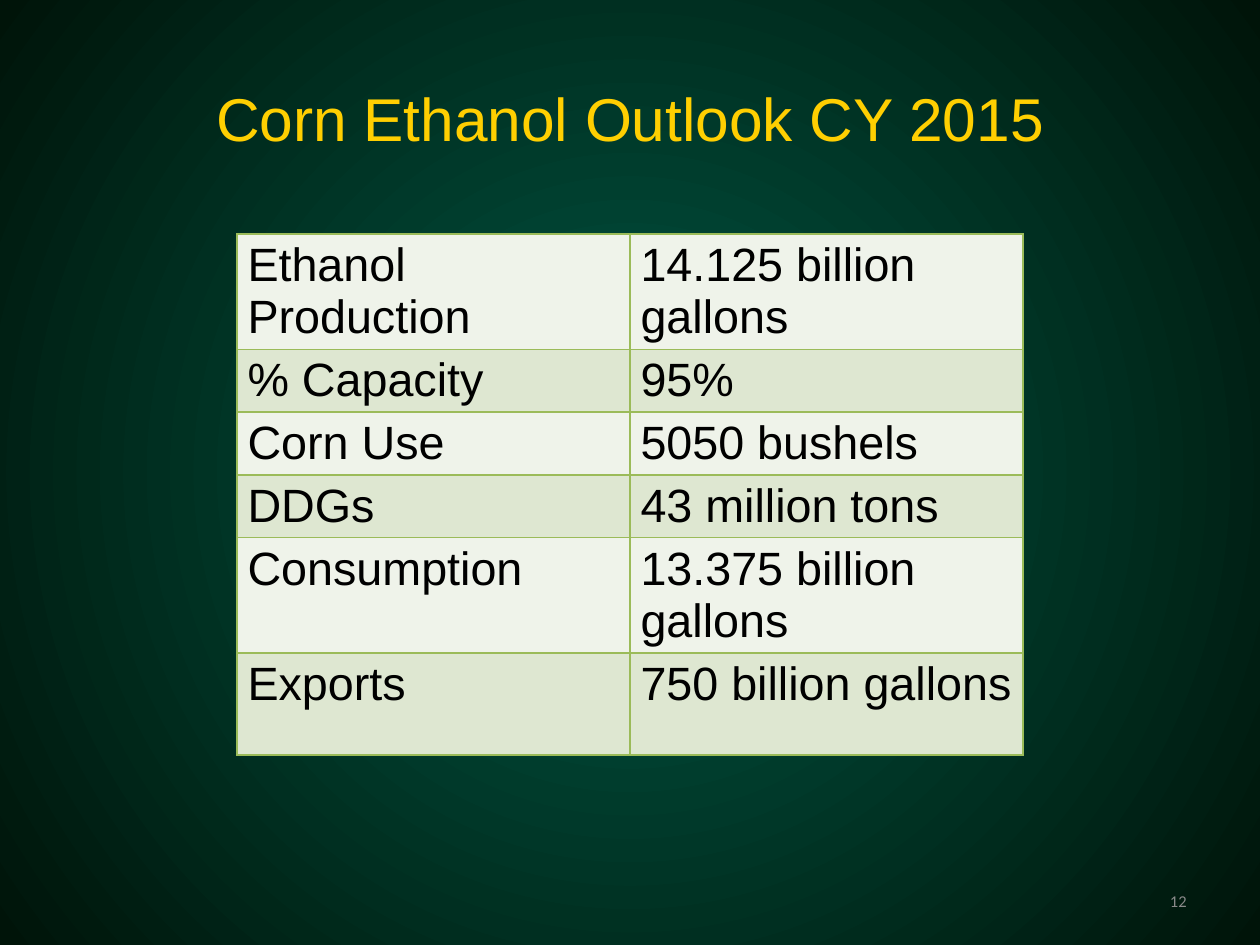
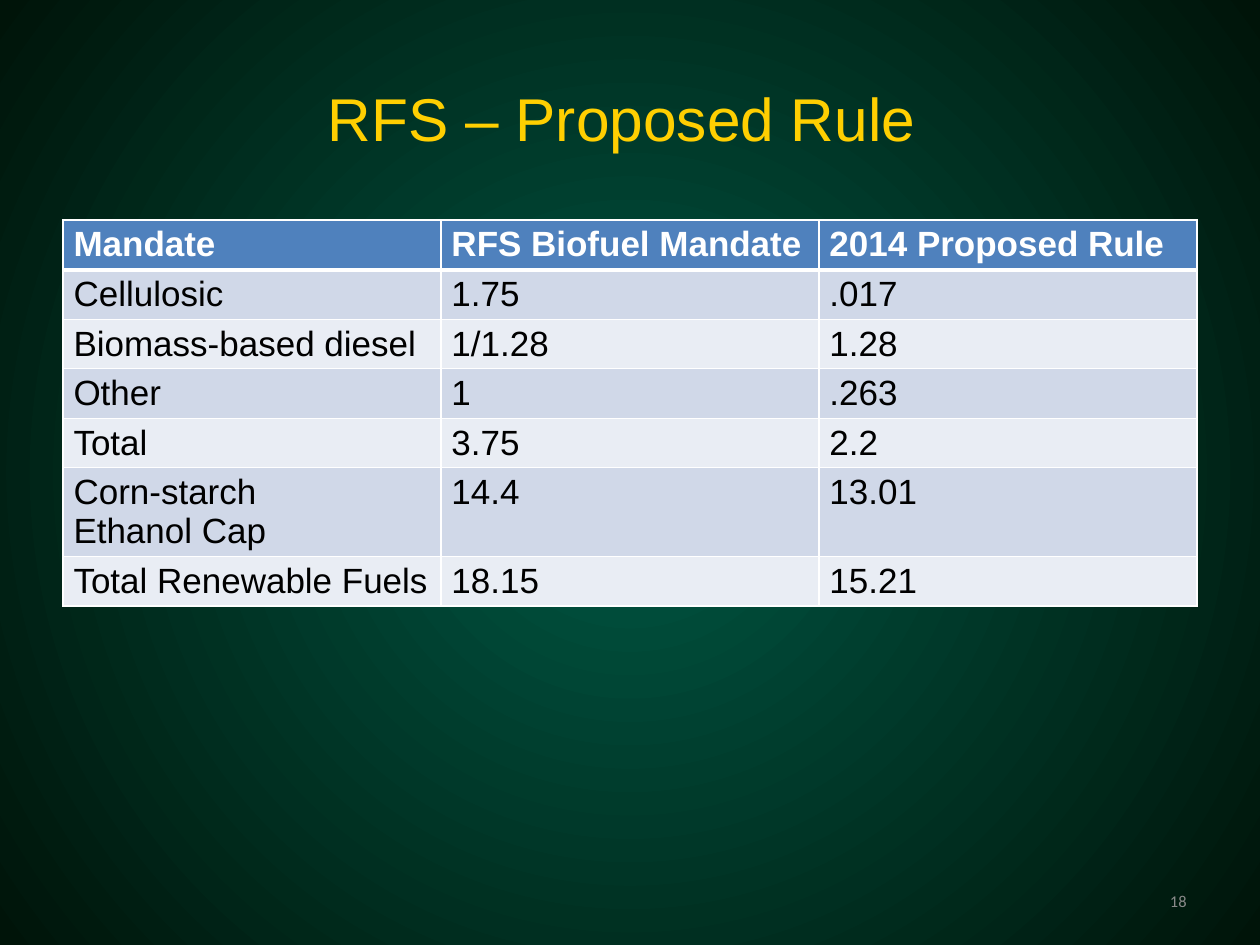
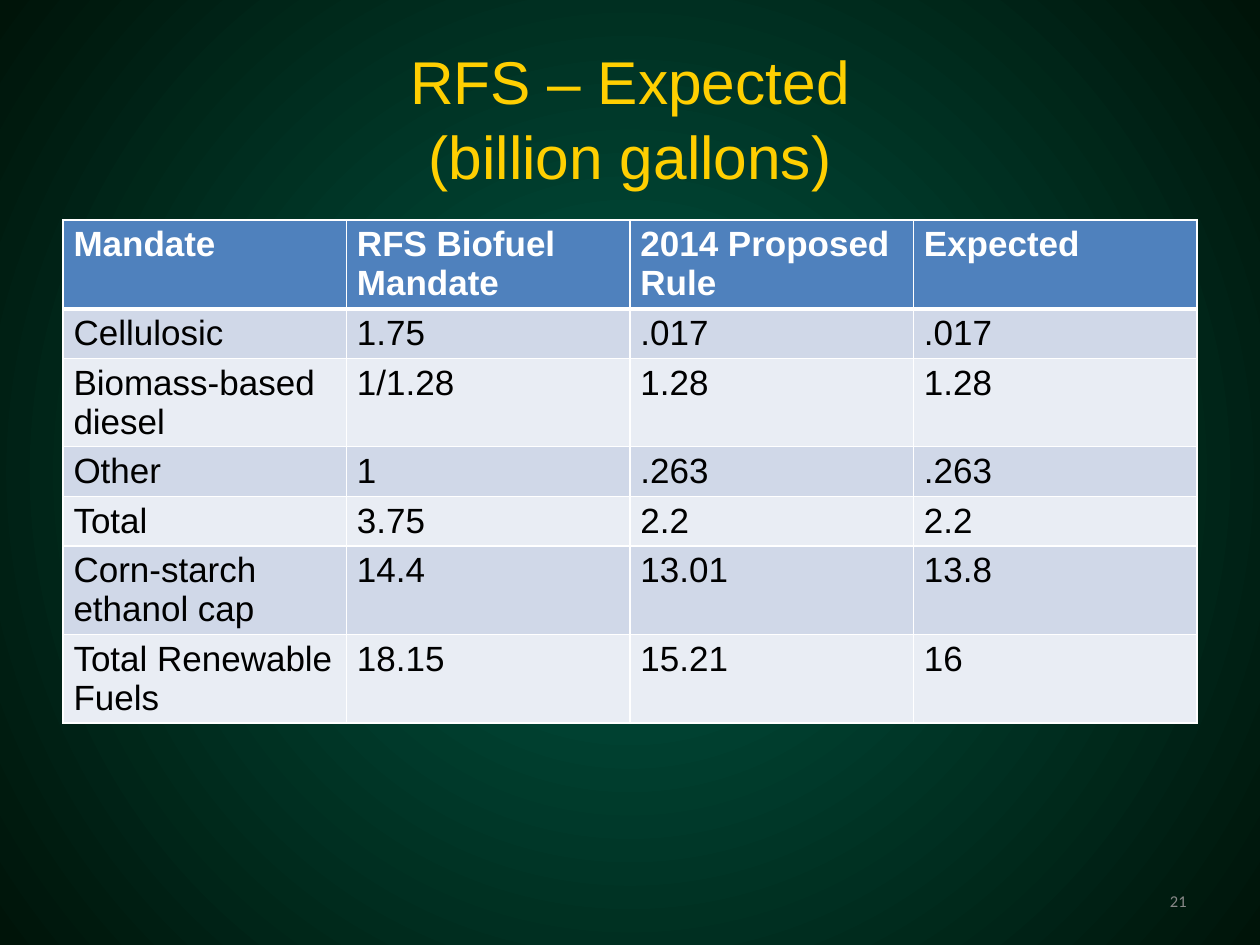
import copy
import pptx
import pptx.dml.color
import pptx.enum.text
import pptx.oxml
import pptx.oxml.ns
import pptx.util

EMU = 914400 // 105
BLACK, WHITE, GOLD, GREY = "000000", "FFFFFF", "FFCF01", "898989"
GREEN = dict(line="9BBB59", bands=("EFF3EA", "DEE7D1"), size=32)
BLUE = dict(line=WHITE, bands=("D0D8E8", "E9EDF4"), size=24, head="4F81BD")
ALIGN = pptx.enum.text.PP_ALIGN
MIDDLE = pptx.enum.text.MSO_ANCHOR.MIDDLE
qn = pptx.oxml.ns.qn

OUTLOOK = [
    ["Ethanol Production", "14.125 billion gallons"],
    ["% Capacity", "95%"],
    ["Corn Use", "5050 bushels"],
    ["DDGs", "43 million tons"],
    ["Consumption", "13.375 billion gallons"],
    ["Exports", "750 billion gallons"],
]
RULE = [
    ["Mandate", "RFS Biofuel Mandate", "2014 Proposed Rule"],
    ["Cellulosic", "1.75", ".017"],
    ["Biomass-based diesel", "1/1.28", "1.28"],
    ["Other", "1", ".263"],
    ["Total", "3.75", "2.2"],
    ["Corn-starch\nEthanol Cap", "14.4", "13.01"],
    ["Total Renewable Fuels", "18.15", "15.21"],
]
LAST = ["Expected", ".017", "1.28", ".263", "2.2", "13.8", "16"]
EXPECT = [row + [end] for row, end in zip(RULE, LAST)]
EXPECT[5][0] = "Corn-starch ethanol cap"


def px(n):
    return pptx.util.Emu(n * EMU)


def color(code):
    return pptx.dml.color.RGBColor.from_string(code)


def write(frame, text, size, fore=BLACK, font="Arial", bold=False,
          align=ALIGN.LEFT, space=None):
    """Fill a text frame; \\n parts paragraphs, \\v breaks a line."""
    frame.word_wrap = True
    frame.text = text
    for para in frame.paragraphs:
        para.alignment = align
        para.line_spacing = space
        for run in para.runs:
            run.font.size = pptx.util.Pt(size)
            run.font.name = font
            run.font.bold = bold
            run.font.color.rgb = color(fore)
        # Breaks take the format of the text around them
        for gap in para._p.findall(qn("a:br")):
            gap.append(copy.deepcopy(para.runs[0]._r.rPr))


def paint(master):
    """Radial green background for every slide."""
    fill = master.background.fill
    fill.gradient()
    for stop, code, place in zip(fill.gradient_stops,
                                 ("005643", "001409"), (0.02, 1)):
        stop.color.rgb = color(code)
        stop.position = place
    grad = master.element.find(".//" + qn("p:bgPr") + "/" + qn("a:gradFill"))
    grad.remove(grad.find(qn("a:lin")))
    grad.append(pptx.oxml.parse_xml(
        f'<a:path {pptx.oxml.ns.nsdecls("a")} path="circle">'
        '<a:fillToRect l="50000" t="50000" r="50000" b="50000"/></a:path>'))


def edge(cell, code, **wide):
    """Draw the four borders, 1 pt unless a side is given."""
    props = cell._tc.get_or_add_tcPr()
    for side in "LRTB":
        width = pptx.util.Pt(wide.get(side, 1))
        props.append(pptx.oxml.parse_xml(
            f'<a:ln{side} {pptx.oxml.ns.nsdecls("a")} w="{width}"><a:solidFill>'
            f'<a:srgbClr val="{code}"/></a:solidFill></a:ln{side}>'))


def grid(slide, data, box, highs, line, bands, size, head=None):
    """Banded table in box, with an optional header row."""
    left, top, width, height = box
    cols = len(data[0])
    shape = slide.shapes.add_table(len(data), cols, *map(px, box))
    table = shape.table
    table.first_row = bool(head)
    for col in table.columns:
        col.width = px(width) // cols
    for i, (row, high) in enumerate(zip(data, highs)):
        table.rows[i].height = px(high)
        top_row = bool(head) and i == 0
        thick = {}
        if head and i < 2:
            thick = {"B": 3} if top_row else {"T": 3}
        band = bands[(i - bool(head)) % 2]
        for j, text in enumerate(row):
            cell = table.cell(i, j)
            edge(cell, line, **thick)
            cell.fill.solid()
            cell.fill.fore_color.rgb = color(head if top_row else band)
            write(cell.text_frame, text, size, bold=top_row,
                  fore=WHITE if top_row else BLACK)
    shape.height = px(height)


def page(deck, title, num):
    """Slide with the shared title and page number."""
    slide = deck.slides.add_slide(deck.slide_layouts[5])
    head = slide.shapes.title
    head.left, head.top, head.width, head.height = map(px, (63, 38, 1134, 157))
    write(head.text_frame, title, 41.4, fore=GOLD, align=ALIGN.CENTER,
          space=1.03)
    foot = slide.shapes.add_textbox(*map(px, (903, 876, 294, 50)))
    write(foot.text_frame, num, 11.3, fore=GREY, font="Calibri",
          align=ALIGN.RIGHT)
    for shape in (head, foot):
        shape.text_frame.vertical_anchor = MIDDLE
        shape.text_frame.auto_size = pptx.enum.text.MSO_AUTO_SIZE.NONE
    return slide


def main():
    deck = pptx.Presentation()
    deck.slide_width, deck.slide_height = px(1260), px(945)
    paint(deck.slide_master)

    # Outlook
    slide = page(deck, "Corn Ethanol Outlook CY 2015", "12")
    grid(slide, OUTLOOK, (237, 234, 786, 547), [102, 62, 62, 62, 102, 102],
         **GREEN)

    # Fuel mandates
    slide = page(deck, "RFS – Proposed Rule ", "18")
    grid(slide, RULE, (63, 220, 1134, 410), [43] * 7, **BLUE)
    slide = page(deck, "RFS – Expected\v(billion gallons)", "21")
    grid(slide, EXPECT, (63, 220, 1134, 536), [43] * 7, **BLUE)

    deck.save("out.pptx")


if __name__ == "__main__":
    main()
